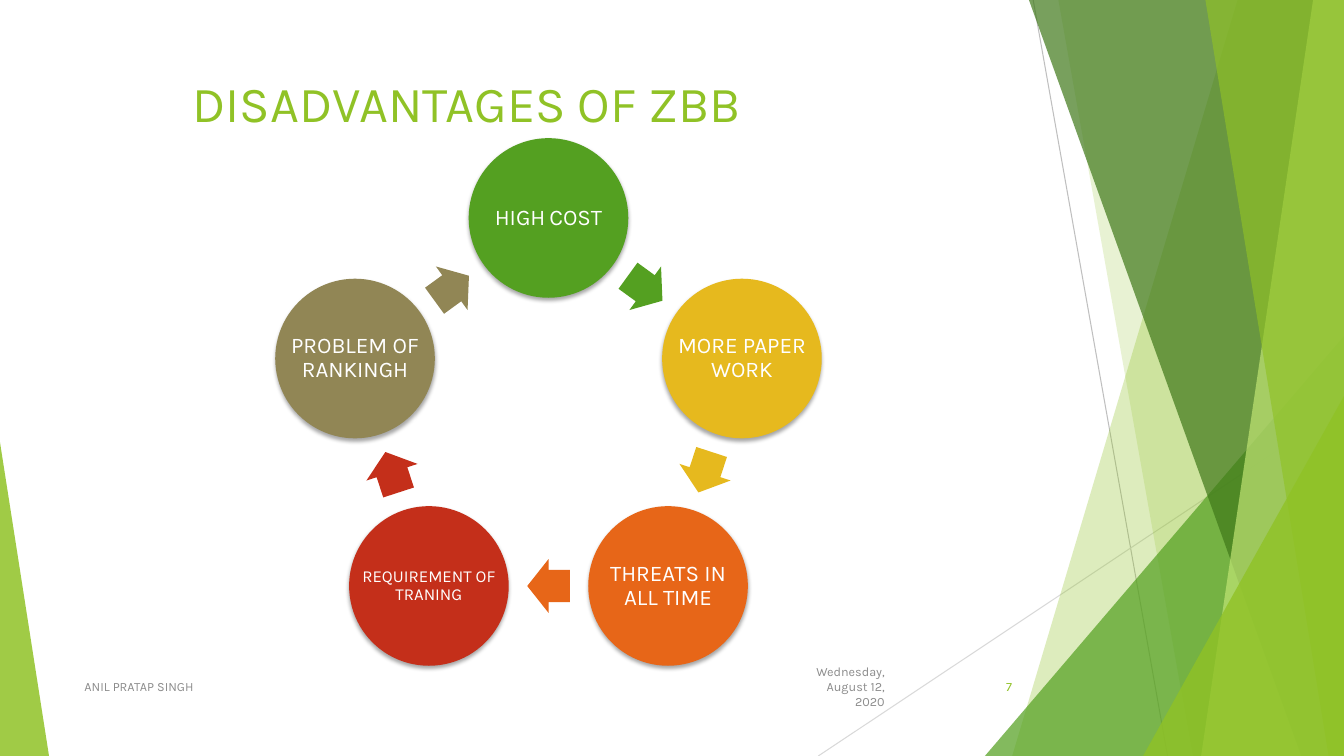
from math import cos, pi, sin

from lxml.etree import SubElement
from pptx import Presentation
from pptx.dml.color import RGBColor
from pptx.enum.shapes import MSO_CONNECTOR, MSO_SHAPE
from pptx.enum.text import MSO_ANCHOR, MSO_AUTO_SIZE, PP_ALIGN
from pptx.oxml.ns import qn
from pptx.util import Pt

FONT = "Karla"
LIME = "90C226"
GREY = "8C8C8C"
WIDE, HIGH = 960, 540

TITLE = "DISADVANTAGES OF ZBB"
# Clockwise from the top: text runs with their sizes, colour
STEPS = [
    ([("HIGH", 16), (" ", 12), ("COST", 16)], "54A021"),
    ([("MORE PAPER WORK", 16)], "E6B91E"),
    ([("THREATS IN ALL TIME", 16)], "E76618"),
    ([("REQUIREMENT OF TRANING", 12)], "C42F1A"),
    ([("PROBLEM OF RANKINGH", 16)], "918655"),
]
# Text, left, width, alignment, colour
FOOTER = [
    ("Wednesday, August 12, 2020", 567, 72, PP_ALIGN.RIGHT, GREY),
    ("ANIL PRATAP SINGH", 53.3, 496, PP_ALIGN.LEFT, GREY),
    ("7", 676, 54, PP_ALIGN.RIGHT, LIME),
]
# Start, end, colour
LINES = [
    ((738, 0), (834, HIGH), "BFBFBF"),
    ((WIDE, 290), (584.5, HIGH), "D9D9D9"),
]
# A band runs to the right edge: top x, bottom x, colour, opacity
# A wedge stands on the bottom edge: left, width, height, apex, colour, opacity
DECOR = [
    ("band", (884, 723), LIME, 30),
    ("band", (756, 852), LIME, 20),
    ("wedge", (703.5, 256.5, 300, 1), "54A021", 72),
    ("band", (735, 929.5), "3F7819", 70),
    ("band", (938, 858), "C0E474", 70),
    ("band", (861, 949), LIME, 65),
    ("wedge", (816.5, 143.5, 257, 1), LIME, 80),
    ("wedge", (0, 35, 224, 0), LIME, 85),
]
MID_X, MID_Y, RING = 391.8, 301, 145.3
DISC, INSET = 114, 7
ARROW_W, ARROW_H = 30.4, 38.4


def color(text):
    return RGBColor.from_string(text)


def paint(shape, tint, alpha=100):
    shape.shadow.inherit = False
    shape.fill.solid()
    shape.fill.fore_color.rgb = color(tint)
    shape.line.fill.background()
    if alpha < 100:
        node = shape.element.spPr.find(qn("a:solidFill"))[0]
        SubElement(node, qn("a:alpha"), val=str(alpha * 1000))


def drop(shape):
    """Add a soft shadow straight below the shape."""
    effects = shape.element.spPr.find(qn("a:effectLst"))
    shade = SubElement(effects, qn("a:outerShdw"), blurRad=str(Pt(3)),
                       dist=str(Pt(2)), dir="5400000", rotWithShape="0")
    black = SubElement(shade, qn("a:srgbClr"), val="000000")
    SubElement(black, qn("a:alpha"), val="35000")


def write(para, text, size, tint):
    run = para.add_run()
    run.text = text
    run.font.name = FONT
    run.font.size = Pt(size)
    run.font.color.rgb = color(tint)


def box(slide, left, top, width, height, align):
    """Add a middle-anchored text box; return its frame and paragraph."""
    frame = slide.shapes.add_textbox(
        Pt(left), Pt(top), Pt(width), Pt(height)).text_frame
    frame.word_wrap = True
    frame.vertical_anchor = MSO_ANCHOR.MIDDLE
    para = frame.paragraphs[0]
    para.alignment = align
    return frame, para


def decorate(slide):
    shapes = slide.shapes
    for start, end, tint in LINES:
        line = shapes.add_connector(
            MSO_CONNECTOR.STRAIGHT, *map(Pt, start + end))
        line.line.color.rgb = color(tint)
        line.line.width = Pt(0.75)
        SubElement(line.element.spPr, qn("a:effectLst"))
    for kind, place, tint, alpha in DECOR:
        if kind == "band":
            top, foot = place
            path = shapes.build_freeform(Pt(top), 0)
            path.add_line_segments([(Pt(x), Pt(y)) for x, y in (
                (WIDE, 0), (WIDE, HIGH), (foot, HIGH))])
            shape = path.convert_to_shape()
        else:
            left, width, height, apex = place
            shape = shapes.add_shape(
                MSO_SHAPE.ISOSCELES_TRIANGLE, Pt(left), Pt(HIGH - height),
                Pt(width), Pt(height))
            shape.adjustments[0] = apex
        paint(shape, tint, alpha)


def head(slide):
    title = slide.shapes.title
    title.left, title.top = Pt(53.5), Pt(47.5)
    title.width, title.height = Pt(677), Pt(51)
    frame = title.text_frame
    frame.auto_size = MSO_AUTO_SIZE.NONE
    frame.vertical_anchor = MSO_ANCHOR.MIDDLE
    frame.margin_left = Pt(84)
    para = frame.paragraphs[0]
    para.alignment = PP_ALIGN.LEFT
    write(para, TITLE, 36, LIME)


def cycle(slide):
    """Place the discs evenly on a ring, with an arrow between neighbours."""
    turn = 2 * pi / len(STEPS)
    spots = [(MID_X + RING * sin(i * turn), MID_Y - RING * cos(i * turn))
             for i in range(len(STEPS))]
    for i, (runs, tint) in enumerate(STEPS):
        x, y = spots[i]
        area = (x - DISC / 2, y - DISC / 2, DISC, DISC)
        disc = slide.shapes.add_shape(MSO_SHAPE.OVAL, *map(Pt, area))
        paint(disc, tint)
        drop(disc)
        frame, para = box(slide, *area, PP_ALIGN.CENTER)
        frame.margin_left = frame.margin_right = Pt(INSET)
        frame.margin_top = frame.margin_bottom = Pt(INSET)
        para.line_spacing = 0.9
        for text, size in runs:
            write(para, text, size, "FFFFFF")

        next_x, next_y = spots[(i + 1) % len(spots)]
        arrow = slide.shapes.add_shape(
            MSO_SHAPE.RIGHT_ARROW, Pt((x + next_x - ARROW_W) / 2),
            Pt((y + next_y - ARROW_H) / 2), Pt(ARROW_W), Pt(ARROW_H))
        arrow.adjustments[0] = 0.6
        arrow.adjustments[1] = 0.5
        arrow.rotation = 36 + 72 * i
        paint(arrow, tint)


def main():
    deck = Presentation()
    deck.slide_width, deck.slide_height = Pt(WIDE), Pt(HIGH)
    slide = deck.slides.add_slide(deck.slide_layouts[5])
    decorate(slide)
    head(slide)
    cycle(slide)
    for text, left, width, align, tint in FOOTER:
        para = box(slide, left, 476, width, 29, align)[1]
        write(para, text, 9, tint)
    deck.save("out.pptx")


if __name__ == "__main__":
    main()
